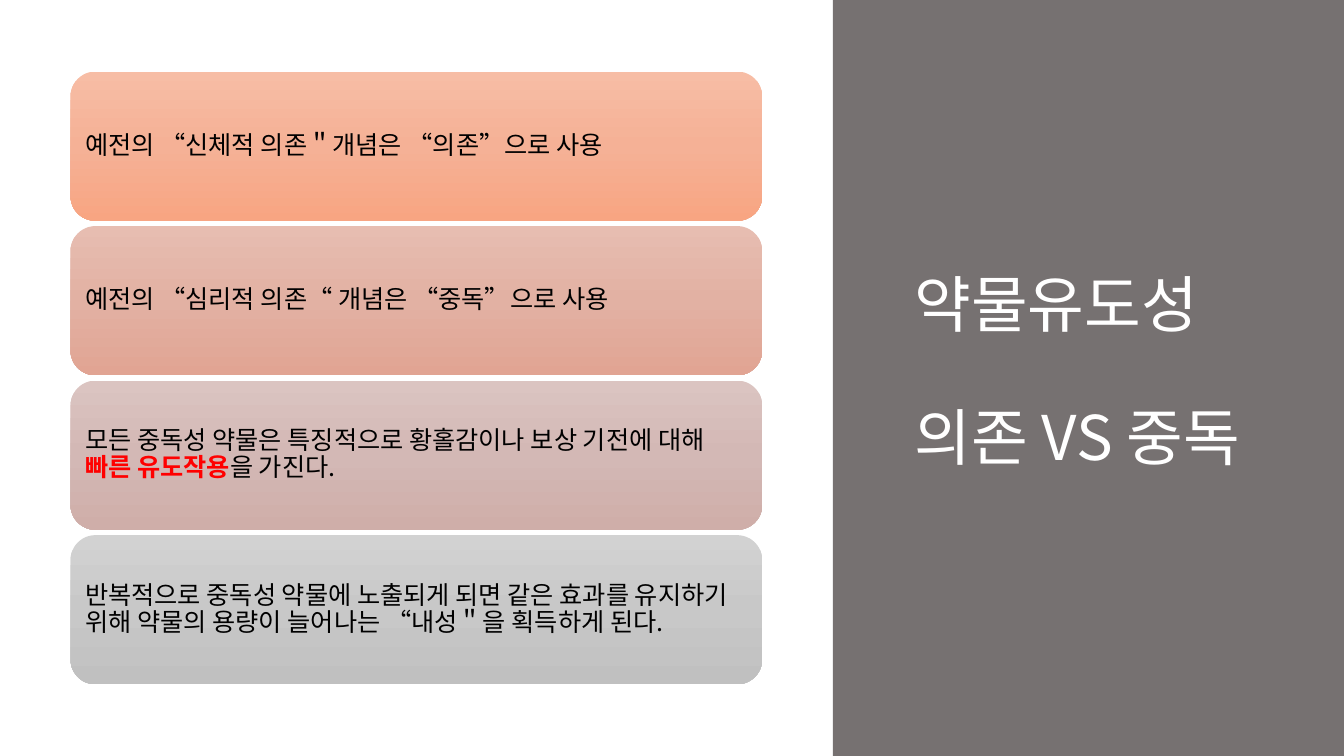
from copy import deepcopy

from lxml import etree
from pptx import Presentation
from pptx import util as u
from pptx.dml.color import RGBColor
from pptx.enum import shapes, text
from pptx.oxml import ns


def color(hex_code):
    return RGBColor.from_string(hex_code)


class SlideBuilder:
    font_name = "Noto Sans CJK KR"
    line_spacing = 0.9

    def __init__(self, slide):
        self.slide = slide

    def group(self):
        return self.slide.shapes.add_group_shape().shapes

    def block(self, parent, kind, box, fills):
        """Add a shape with one solid colour or an even downward gradient."""
        shape = parent.add_shape(kind, *map(u.Inches, box))
        shape.shadow.inherit = False
        shape.line.fill.background()
        if len(fills) == 1:
            shape.fill.solid()
            shape.fill.fore_color.rgb = color(fills[0])
            return shape
        shape.fill.gradient()
        shape.fill.gradient_angle = 270
        stop_list = shape._element.spPr.find(".//" + ns.qn("a:gsLst"))
        while len(stop_list) < len(fills):
            stop_list.append(deepcopy(stop_list[0]))
        for i, (stop, fill) in enumerate(zip(shape.fill.gradient_stops, fills)):
            stop.position = i / (len(fills) - 1)
            stop.color.rgb = color(fill)
        return shape

    def text(self, parent, box, paragraphs, size, ink, inset=(0.1, 0.05), gap=0):
        """Add middle-anchored text; each run is (words, format overrides)."""
        frame = parent.add_textbox(*map(u.Inches, box)).text_frame
        side, edge = map(u.Inches, inset)
        frame_format = {
            "word_wrap": True,
            "vertical_anchor": text.MSO_ANCHOR.MIDDLE,
            "margin_left": side, "margin_right": side,
            "margin_top": edge, "margin_bottom": edge,
        }
        for name, value in frame_format.items():
            setattr(frame, name, value)
        for i, runs in enumerate(paragraphs):
            paragraph = frame.add_paragraph() if i else frame.paragraphs[0]
            paragraph.line_spacing = self.line_spacing
            paragraph.space_before = u.Pt(gap if i else 0)
            for words, overrides in runs:
                self.run(paragraph, words, {"size": u.Pt(size), "ink": ink, **overrides})

    def run(self, paragraph, words, run_format):
        run = paragraph.add_run()
        run.text = words
        run.font.color.rgb = color(run_format.pop("ink"))
        for name, value in {"name": self.font_name, **run_format}.items():
            setattr(run.font, name, value)
        east_asian = etree.SubElement(run.font._element, ns.qn("a:ea"))
        east_asian.set("typeface", self.font_name)


CARDS = [
    (["F7BDA5", "F5B196", "F8A582"],
     [("예전의 “신체적 의존＂개념은 “의존”으로 사용", {})]),
    (["E7BDB1", "E2B1A3", "E1A493"],
     [("예전의 “심리적 의존“ 개념은 “중독”으로 사용", {})]),
    (["DBC4C1", "D3B8B5", "CFAEA9"],
     [("모든 중독성 약물은 특징적으로 황홀감이나 보상 기전에 대해 ", {}),
      ("빠른 유도작용", {"ink": "FF0000", "bold": True}),
      ("을 가진다.", {})]),
    (["D2D2D2", "C8C8C8", "C0C0C0"],
     [("반복적으로 중독성 약물에 노출되게 되면 같은 효과를 유지하기 위해 "
       "약물의 용량이 늘어나는 “내성＂을 획득하게 된다.", {})]),
]
CARD_LEFT, CARD_TOP, CARD_WIDTH, CARD_HEIGHT = 0.7, 0.71, 6.86, 1.48
CARD_PITCH = 1.533
CARD_PAD = 0.075


def main():
    deck = Presentation()
    deck.slide_width, deck.slide_height = u.Inches(13.33), u.Inches(7.5)
    builder = SlideBuilder(deck.slides.add_slide(deck.slide_layouts[6]))
    canvas = builder.slide.shapes

    # Title panel
    builder.block(canvas, shapes.MSO_SHAPE.RECTANGLE, (8.26, 0, 5.07, 7.5), ["767171"])
    title = [[("약물유도성", {})], [("의존 VS 중독", {})]]
    builder.text(canvas, (8.97, 0.7, 4.01, 6.02), title, 44, "FFFFFF", gap=48)

    # Statement cards
    cards = builder.group()
    for i, (fills, statement) in enumerate(CARDS):
        top = CARD_TOP + i * CARD_PITCH
        builder.block(cards, shapes.MSO_SHAPE.ROUNDED_RECTANGLE,
                      (CARD_LEFT, top, CARD_WIDTH, CARD_HEIGHT), fills)
        text_box = (CARD_LEFT + CARD_PAD, top + CARD_PAD,
                    CARD_WIDTH - 2 * CARD_PAD, CARD_HEIGHT - 2 * CARD_PAD)
        builder.text(cards, text_box, [statement], 18, "000000", inset=(0.07, 0.07))

    deck.save("out.pptx")


if __name__ == "__main__":
    main()
